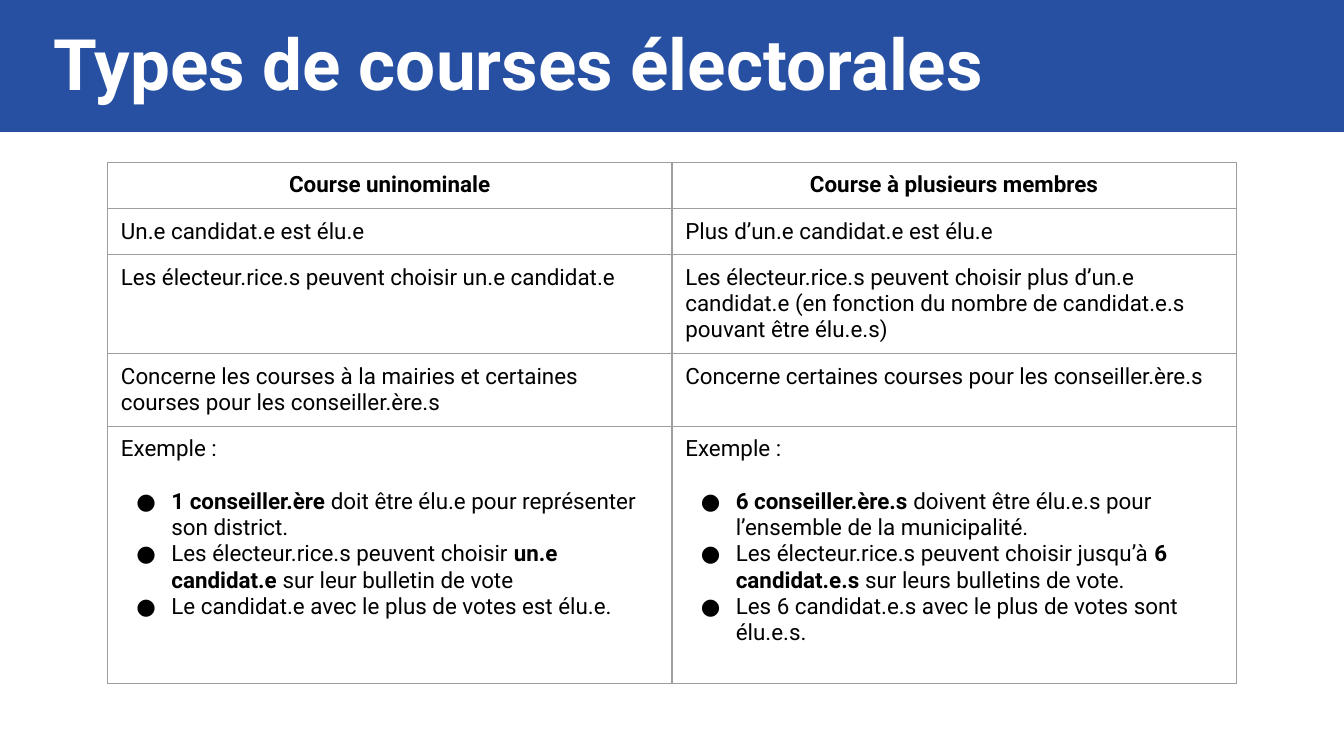
from dataclasses import dataclass
from typing import NamedTuple

from lxml.etree import SubElement as Sub
from pptx import Presentation
from pptx.dml.color import RGBColor
from pptx.enum.text import MSO_ANCHOR as Anchor, MSO_AUTO_SIZE as Fit, PP_ALIGN as Align
from pptx.enum.shapes import MSO_SHAPE as Shape
from pptx.oxml.ns import qn
from pptx.util import Pt

BLUE = RGBColor(0x27, 0x50, 0xA3)
GREY = RGBColor(0x9E, 0x9E, 0x9E)
BLACK = RGBColor(0, 0, 0)
WHITE = RGBColor(0xFF, 0xFF, 0xFF)
FONT = "Roboto"
SIZE = 12
WIDTH, HEIGHT = 720, 405
LEFT, TOP, SPAN = 57.6, 87, 302.4


class Bit(NamedTuple):
    text: str
    bold: bool = False


@dataclass
class Line:
    bits: list[Bit]
    align: Align = Align.LEFT
    dot: bool = False
    after: float = 0


@dataclass
class Row:
    height: float
    cells: list[list[Line]]


def head(text: str) -> list[Line]:
    return [Line([Bit(text, True)], align=Align.CENTER)]


def plain(text: str) -> list[Line]:
    return [Line([Bit(text)])]


def sample(*items: list[Bit]) -> list[Line]:
    return [Line([Bit("Exemple :")], after=14)] + [Line(bits, dot=True) for bits in items]


ROWS = [
    Row(24.8, [head("Course uninominale"), head("Course à plusieurs membres")]),
    Row(24.8, [plain("Un.e candidat.e est élu.e"), plain("Plus d’un.e candidat.e est élu.e")]),
    Row(53, [
        plain("Les électeur.rice.s peuvent choisir un.e candidat.e"),
        plain("Les électeur.rice.s peuvent choisir plus d’un.e candidat.e "
              "(en fonction du nombre de candidat.e.s pouvant être élu.e.s)"),
    ]),
    Row(38.9, [
        plain("Concerne les courses à la mairies et certaines courses pour les conseiller.ère.s"),
        plain("Concerne certaines courses pour les conseiller.ère.s"),
    ]),
    Row(137.7, [
        sample(
            [Bit("1 conseiller.ère ", True), Bit("doit être élu.e pour représenter son district.")],
            [Bit("Les électeur.rice.s peuvent choisir"), Bit(" un.e candidat.e", True),
             Bit(" sur leur bulletin de vote")],
            [Bit("Le candidat.e avec le plus de votes est élu.e.")],
        ),
        sample(
            [Bit("6 conseiller.ère.s ", True),
             Bit("doivent être élu.e.s pour l’ensemble de la municipalité.")],
            [Bit("Les électeur.rice.s peuvent choisir jusqu’à "), Bit("6 candidat.e.s", True),
             Bit(" sur leurs bulletins de vote.")],
            [Bit("Les 6 candidat.e.s avec le plus de votes sont élu.e.s.")],
        ),
    ]),
]


def style(run, size: float, tint: RGBColor, bold: bool) -> None:
    font = run.font
    font.name, font.size, font.bold = FONT, Pt(size), bold
    font.color.rgb = tint


def add_dot(para) -> None:
    props = para._p.get_or_add_pPr()
    props.set("marL", str(Pt(27)))
    props.set("indent", str(Pt(-18.7)))
    tint = Sub(props, qn("a:buClr"))
    Sub(tint, qn("a:srgbClr"), val=str(BLACK))
    Sub(props, qn("a:buFont"), typeface=FONT)
    Sub(props, qn("a:buChar"), char="●")


def add_edge(cell) -> None:
    props = cell._tc.get_or_add_tcPr()
    for side in ("lnL", "lnR", "lnT", "lnB"):
        edge = Sub(props, qn(f"a:{side}"), w=str(Pt(0.75)))
        fill = Sub(edge, qn("a:solidFill"))
        Sub(fill, qn("a:srgbClr"), val=str(GREY))


def fill_cell(cell, lines: list[Line]) -> None:
    cell.margin_left = cell.margin_right = Pt(7.2)
    cell.margin_top = cell.margin_bottom = Pt(5.2)
    cell.vertical_anchor = Anchor.TOP
    add_edge(cell)
    cell.fill.solid()
    cell.fill.fore_color.rgb = WHITE
    frame = cell.text_frame
    for at, line in enumerate(lines):
        para = frame.add_paragraph() if at else frame.paragraphs[0]
        para.alignment = line.align
        para.space_after = Pt(line.after)
        if line.dot:
            add_dot(para)
        for bit in line.bits:
            run = para.add_run()
            run.text = bit.text
            style(run, SIZE, BLACK, bit.bold)


def add_title(slide, text: str) -> None:
    title = slide.shapes.title
    bar = slide.shapes.add_shape(Shape.RECTANGLE, Pt(0), Pt(0), Pt(WIDTH), Pt(70.7))
    bar.shadow.inherit = False
    bar.fill.solid()
    bar.fill.fore_color.rgb = BLUE
    bar.line.fill.background()
    title.element.addprevious(bar.element)
    title.left, title.top, title.width, title.height = Pt(21.6), Pt(11.5), Pt(620.6), Pt(49)
    frame = title.text_frame
    frame.text = text
    frame.word_wrap = True
    frame.auto_size = Fit.NONE
    frame.vertical_anchor = Anchor.MIDDLE
    frame.margin_left = frame.margin_right = Pt(7.2)
    frame.margin_top = frame.margin_bottom = Pt(3.6)
    para = frame.paragraphs[0]
    para.alignment = Align.LEFT
    para.line_spacing = 0.9
    style(para.runs[0], 38, WHITE, True)


def add_grid(slide, rows: list[Row]) -> None:
    count = len(rows[0].cells)
    high = sum(row.height for row in rows)
    grid = slide.shapes.add_table(
        len(rows), count, Pt(LEFT), Pt(TOP), Pt(SPAN * count), Pt(high)).table
    grid.first_row = grid.horz_banding = False
    for at, row in enumerate(rows):
        grid.rows[at].height = Pt(row.height)
        for col, lines in enumerate(row.cells):
            fill_cell(grid.cell(at, col), lines)


def main() -> None:
    deck = Presentation()
    deck.slide_width, deck.slide_height = Pt(WIDTH), Pt(HEIGHT)
    slide = deck.slides.add_slide(deck.slide_layouts[5])
    add_title(slide, "Types de courses électorales")
    add_grid(slide, ROWS)
    deck.save("out.pptx")


if __name__ == "__main__":
    main()
